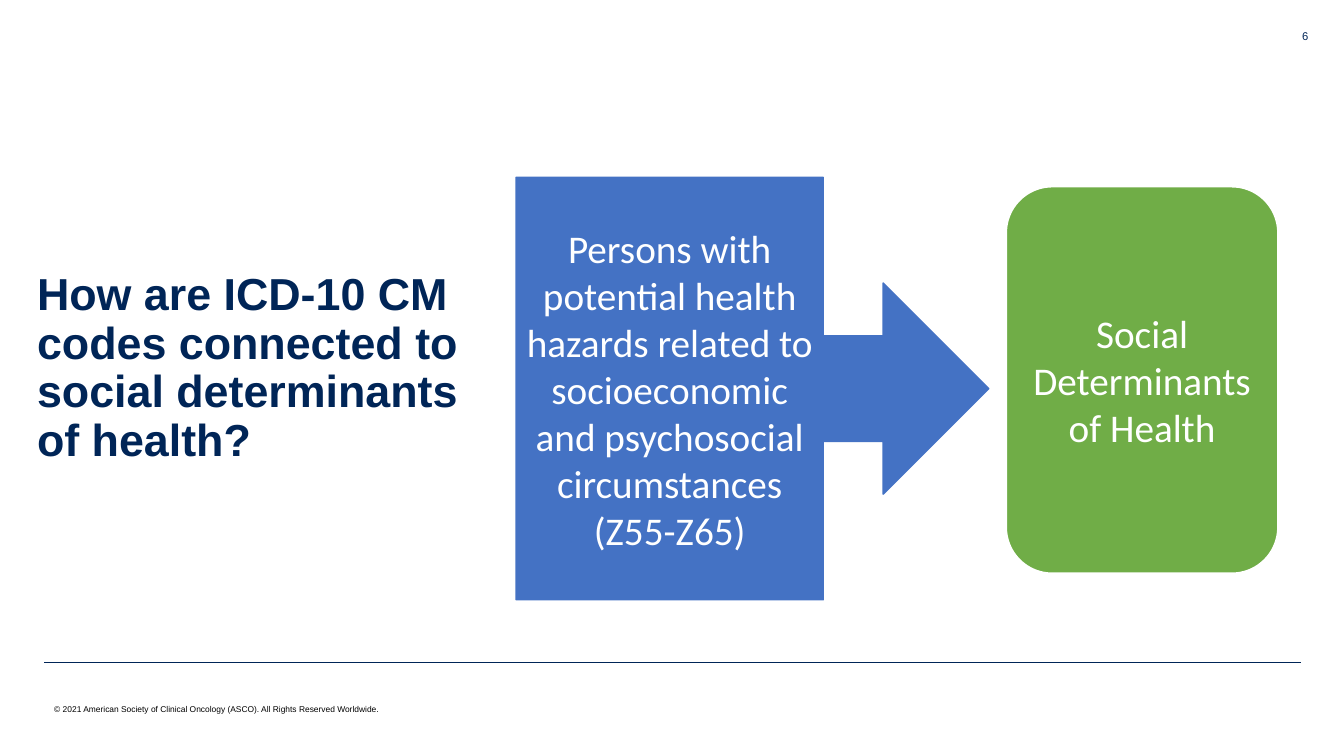
"""Build the slide linking ICD-10 CM codes to social determinants of health."""
from lxml import etree
from pptx import Presentation
from pptx.dml.color import RGBColor
from pptx.enum import shapes, text
from pptx.oxml.ns import qn
from pptx.util import Pt

HUES = {"navy": "002557", "black": "000000", "white": "FFFFFF",
        "blue": "4472C4", "green": "70AD47"}
KIND = shapes.MSO_SHAPE
SIDE = text.PP_ALIGN
MID, TOP = text.MSO_ANCHOR.MIDDLE, text.MSO_ANCHOR.TOP

RULE = (31.7, 473, 929.5, 473)
LABELS = [
    ("How are ICD-10 CM codes connected to social determinants of health?",
     (19.4, 126.7, 324, 273.6), 32, "navy", True, SIDE.LEFT, MID, 0.9),
    ("© 2021 American Society of Clinical Oncology (ASCO). All Rights Reserved Worldwide.",
     (31.7, 492.5, 324, 28.8), 6, "black", False, SIDE.LEFT, MID, 1),
    ("6", (874, 17.3, 67.7, 28.8), 8, "navy", False, SIDE.RIGHT, TOP, 1),
]
BLOCKS = [
    (["Persons with potential health hazards related to socioeconomic "
      "and psychosocial circumstances", "(Z55-Z65)"],
     KIND.RIGHT_ARROW_CALLOUT, (368.6, 126.7, 337.7, 301.7),
     [0.25, 0.25, 0.25, 0.65], "blue", "blue", 1),
    (["Social Determinants of Health"],
     KIND.ROUNDED_RECTANGLE, (718.6, 133.2, 194.4, 276.5),
     [0.17], "green", "white", 1.5),
]


def hue(name):
    return RGBColor.from_string(HUES[name])


def write(shape, lines, face, size, ink, bold, side, anchor, pitch, pad):
    frame = shape.text_frame
    frame.word_wrap = True
    frame.vertical_anchor = anchor
    frame.margin_left = frame.margin_right = Pt(pad)
    frame.text = "\n".join(lines)
    for para in frame.paragraphs:
        para.alignment = side
        para.line_spacing = pitch
        font = para.font
        font.name, font.size, font.bold = face, Pt(size), bold
        font.color.rgb = hue(ink)


def main():
    deck = Presentation()
    deck.slide_width, deck.slide_height = Pt(960), Pt(540)
    slide = deck.slides.add_slide(deck.slide_layouts[6])

    rule = slide.shapes.add_connector(
        shapes.MSO_CONNECTOR.STRAIGHT, *map(Pt, RULE))
    rule.line.color.rgb = hue("navy")
    rule.line.width = Pt(0.25)
    etree.SubElement(rule._element.spPr, qn("a:effectLst"))

    for words, area, size, ink, bold, side, anchor, pitch in LABELS:
        box = slide.shapes.add_textbox(*map(Pt, area))
        write(box, [words], "Arial", size, ink, bold, side, anchor, pitch, 7.2)

    for lines, kind, area, bends, fill, edge, width in BLOCKS:
        block = slide.shapes.add_shape(kind, *map(Pt, area))
        block.shadow.inherit = False
        for place, bend in enumerate(bends):
            block.adjustments[place] = bend
        block.fill.solid()
        block.fill.fore_color.rgb = hue(fill)
        block.line.color.rgb = hue(edge)
        block.line.width = Pt(width)
        write(block, lines, "Calibri", 28, "white", False, SIDE.CENTER, MID, 1, 5)

    deck.save("out.pptx")


if __name__ == "__main__":
    main()
